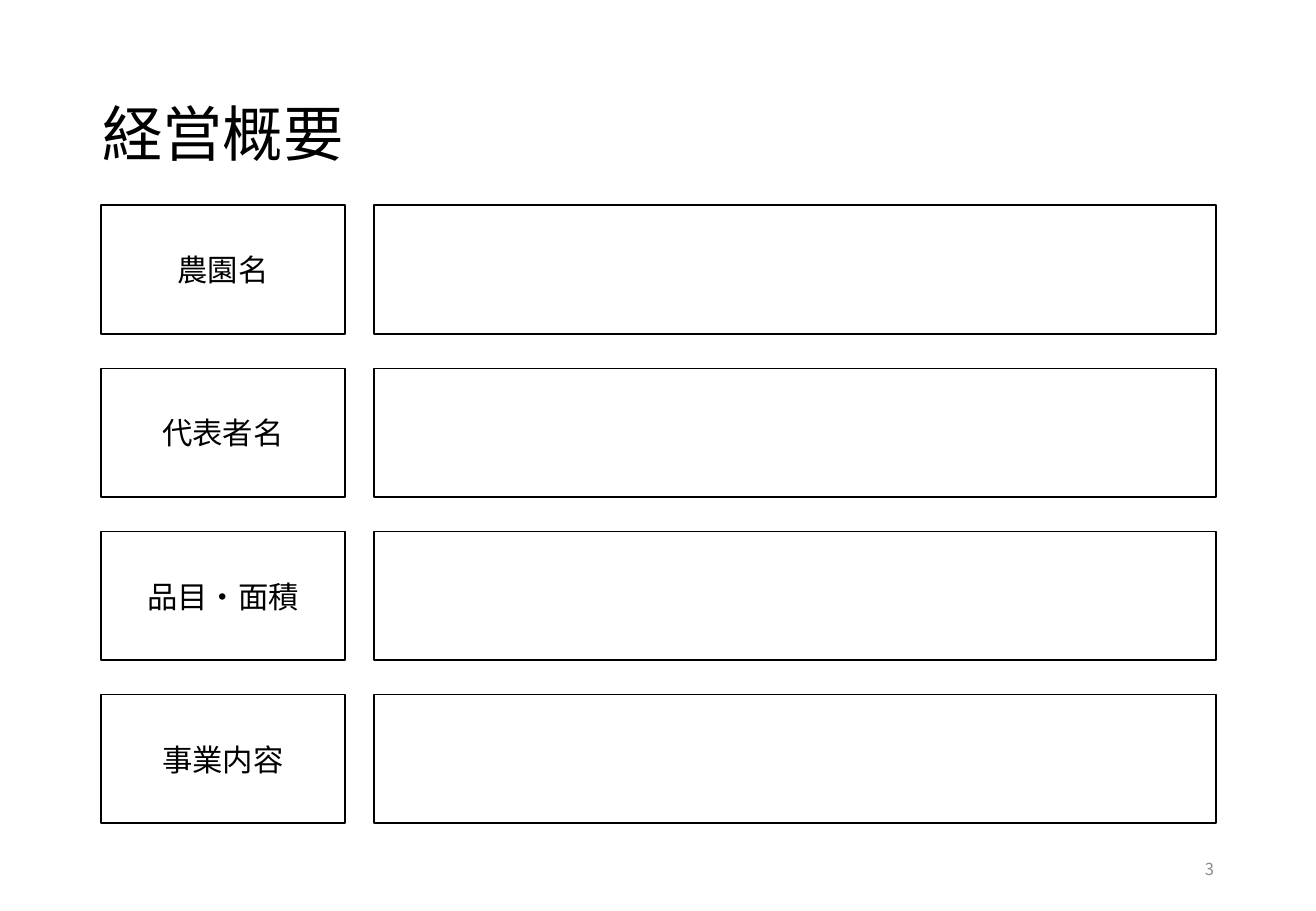
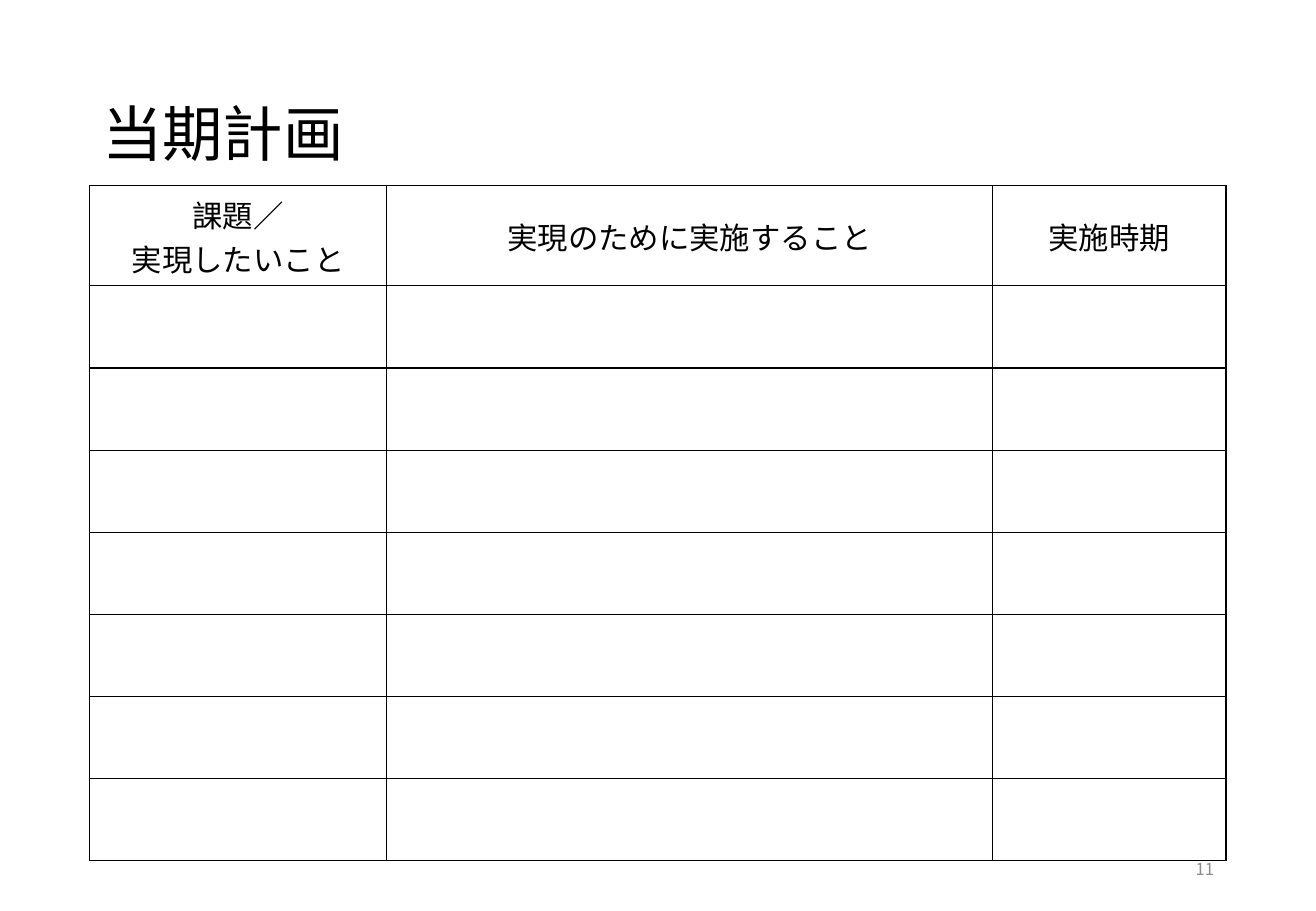
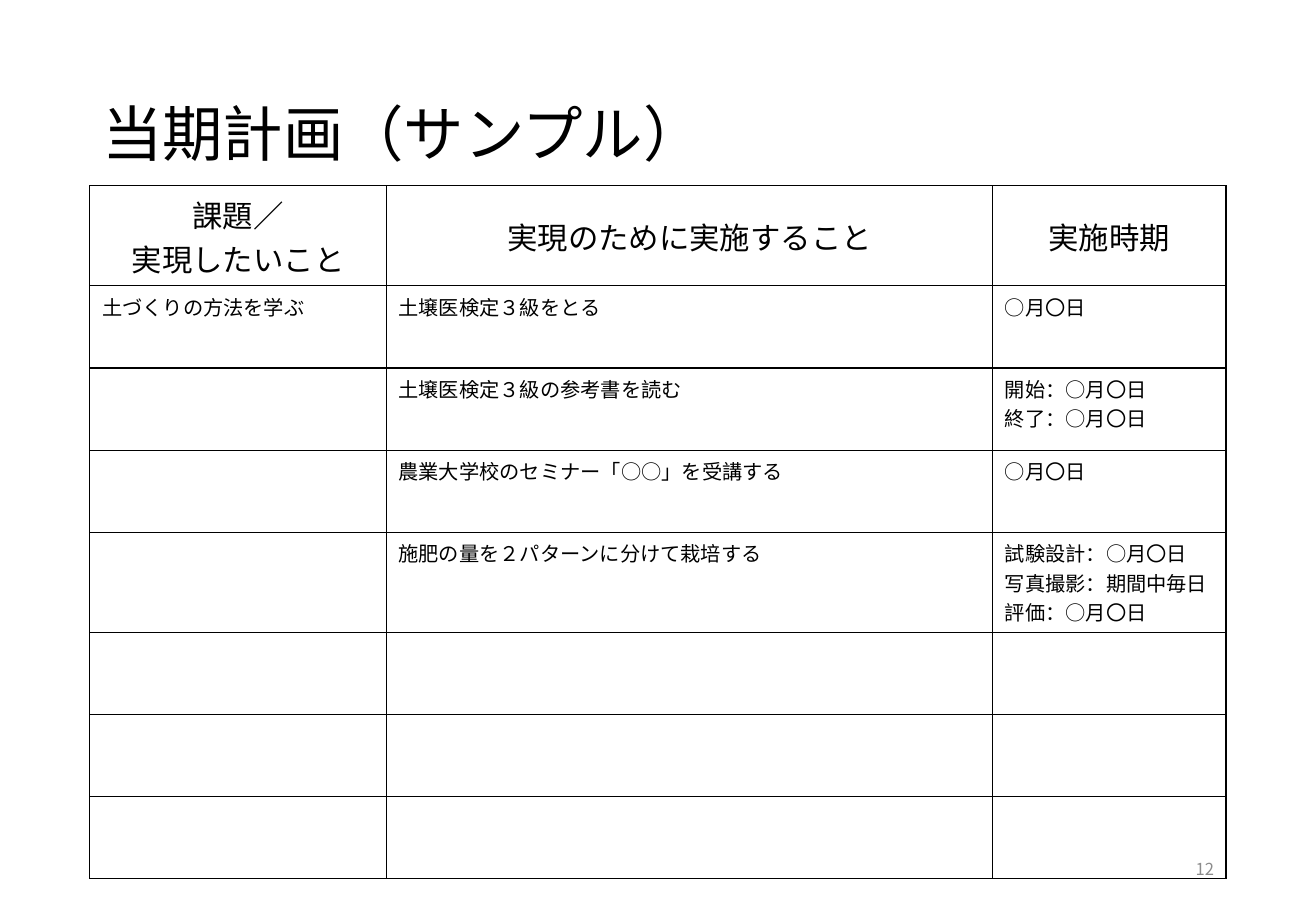
from dataclasses import dataclass

from lxml import etree
from pptx import Presentation
from pptx.dml.color import RGBColor
from pptx.enum.shapes import MSO_SHAPE
from pptx.enum.text import MSO_ANCHOR, MSO_AUTO_SIZE, PP_ALIGN
from pptx.oxml.ns import qn
from pptx.presentation import Presentation as Deck
from pptx.slide import Slide
from pptx.table import _Cell as Cell
from pptx.text.text import TextFrame
from pptx.util import Inches, Pt

RECTANGLE = MSO_SHAPE.RECTANGLE
MIDDLE, TOP = MSO_ANCHOR.MIDDLE, MSO_ANCHOR.TOP
LEFT, CENTER, RIGHT = PP_ALIGN.LEFT, PP_ALIGN.CENTER, PP_ALIGN.RIGHT
NO_AUTOFIT = MSO_AUTO_SIZE.NONE

# Shared look
FONT = "Noto Sans CJK JP"
BLACK, WHITE, GREY = "000000", "FFFFFF", "8C8C8C"
TITLE_ONLY = 5
MARGINS = {"margin_left": Inches(0.1), "margin_right": Inches(0.1),
           "margin_top": Inches(0.05), "margin_bottom": Inches(0.05)}


@dataclass(frozen=True)
class Box:
    left: float
    top: float
    width: float
    height: float

    def lengths(self) -> tuple[int, ...]:
        return tuple(Inches(v) for v in (self.left, self.top, self.width, self.height))


@dataclass(frozen=True)
class TextStyle:
    size: float
    align: PP_ALIGN
    color: str = BLACK
    anchor: MSO_ANCHOR = MIDDLE
    line_spacing: float | None = None


TITLE_STYLE = TextStyle(35.8, LEFT, line_spacing=0.9)
NUMBER_STYLE = TextStyle(9.8, RIGHT, GREY)
LABEL_STYLE = TextStyle(18, CENTER)
ENTRY_STYLE = TextStyle(12, LEFT, anchor=TOP)

TITLE_BOX = Box(0.74, 0.72, 9.34, 0.82)
NUMBER_BOX = Box(7.65, 6.95, 2.44, 0.4)

# Overview form
OVERVIEW_LABELS = ("農園名", "代表者名", "品目・面積", "事業内容")
FIRST_LABEL_BOX = Box(0.83, 1.69, 2.01, 1.06)
ANSWER_LEFT, ANSWER_WIDTH = 3.08, 6.93
FORM_PITCH = 1.343

# Plan table; "\v" breaks a line, "\n" starts a paragraph
PLAN_BOX = Box(0.74, 1.53, 9.35, 5.41)
PLAN_COLUMNS = (2.44, 4.99, 1.92)
PLAN_ROWS = 8
PLAN_HEADER = ("課題／\v実現したいこと", "実現のために実施すること", "実施時期")
SAMPLE_ENTRIES = (
    ("土づくりの方法を学ぶ", "土壌医検定３級をとる", "○月〇日"),
    ("", "土壌医検定３級の参考書を読む", "開始：○月〇日\n終了：○月〇日"),
    ("", "農業大学校のセミナー「○○」を受講する", "○月〇日"),
    ("", "施肥の量を２パターンに分けて栽培する",
     "試験設計：○月〇日\n写真撮影：期間中毎日\n評価：○月〇日"),
)


def rgb(color: str) -> RGBColor:
    return RGBColor.from_string(color)


def write(frame: TextFrame, text: str, style: TextStyle) -> None:
    frame.text = text
    for paragraph in frame.paragraphs:
        paragraph.alignment = style.align
        if style.line_spacing:
            paragraph.line_spacing = style.line_spacing
        for run in paragraph.runs:
            for name, value in {"name": FONT, "size": Pt(style.size)}.items():
                setattr(run.font, name, value)
            run.font.color.rgb = rgb(style.color)
            latin = run.font._element.find(qn("a:latin"))
            east_asian = etree.Element(qn("a:ea"), typeface=FONT)
            latin.addnext(east_asian)


def write_in_frame(frame: TextFrame, text: str, style: TextStyle) -> None:
    settings = {**MARGINS, "word_wrap": True, "auto_size": NO_AUTOFIT,
                "vertical_anchor": style.anchor}
    for name, value in settings.items():
        setattr(frame, name, value)
    write(frame, text, style)


def add_page(deck: Deck, title: str, number: int) -> Slide:
    """Add a slide with the shared title and page number."""
    slide = deck.slides.add_slide(deck.slide_layouts[TITLE_ONLY])
    heading = slide.shapes.title
    heading.left, heading.top, heading.width, heading.height = TITLE_BOX.lengths()
    write_in_frame(heading.text_frame, title, TITLE_STYLE)
    page_number = slide.shapes.add_textbox(*NUMBER_BOX.lengths())
    write_in_frame(page_number.text_frame, str(number), NUMBER_STYLE)
    return slide


def add_form_box(slide: Slide, box: Box, label: str = "") -> None:
    form_box = slide.shapes.add_shape(RECTANGLE, *box.lengths())
    form_box.shadow.inherit = False
    form_box.fill.solid()
    form_box.fill.fore_color.rgb = rgb(WHITE)
    form_box.line.color.rgb = rgb(BLACK)
    form_box.line.width = Pt(1)
    if label:
        write_in_frame(form_box.text_frame, label, LABEL_STYLE)


def add_overview_form(slide: Slide) -> None:
    first = FIRST_LABEL_BOX
    for row, label in enumerate(OVERVIEW_LABELS):
        top = first.top + row * FORM_PITCH
        add_form_box(slide, Box(first.left, top, first.width, first.height), label)
        add_form_box(slide, Box(ANSWER_LEFT, top, ANSWER_WIDTH, first.height))


def set_borders(cell: Cell) -> None:
    properties = cell._tc.get_or_add_tcPr()
    for position, side in enumerate(("a:lnL", "a:lnR", "a:lnT", "a:lnB")):
        border = etree.Element(qn(side), w=str(Pt(0.75)))
        fill = etree.SubElement(border, qn("a:solidFill"))
        etree.SubElement(fill, qn("a:srgbClr"), val=BLACK)
        properties.insert(position, border)


def add_plan_table(slide: Slide, entries: tuple[tuple[str, ...], ...] = ()) -> None:
    table = slide.shapes.add_table(PLAN_ROWS, len(PLAN_COLUMNS), *PLAN_BOX.lengths()).table
    table.first_row = table.horz_banding = False
    for column, width in zip(table.columns, PLAN_COLUMNS):
        column.width = Inches(width)
    texts = (PLAN_HEADER, *entries)
    for row_index, row in enumerate(table.rows):
        style = ENTRY_STYLE if row_index else LABEL_STYLE
        for column_index, cell in enumerate(row.cells):
            cell.fill.background()
            set_borders(cell)
            for name, value in {**MARGINS, "vertical_anchor": style.anchor}.items():
                setattr(cell, name, value)
            if row_index < len(texts) and texts[row_index][column_index]:
                write(cell.text_frame, texts[row_index][column_index], style)


def main() -> None:
    deck = Presentation()
    deck.slide_width, deck.slide_height = Inches(10.83), Inches(7.5)
    add_overview_form(add_page(deck, "経営概要", 3))
    add_plan_table(add_page(deck, "当期計画", 11))
    add_plan_table(add_page(deck, "当期計画（サンプル）", 12), SAMPLE_ENTRIES)
    deck.save("out.pptx")


if __name__ == "__main__":
    main()
